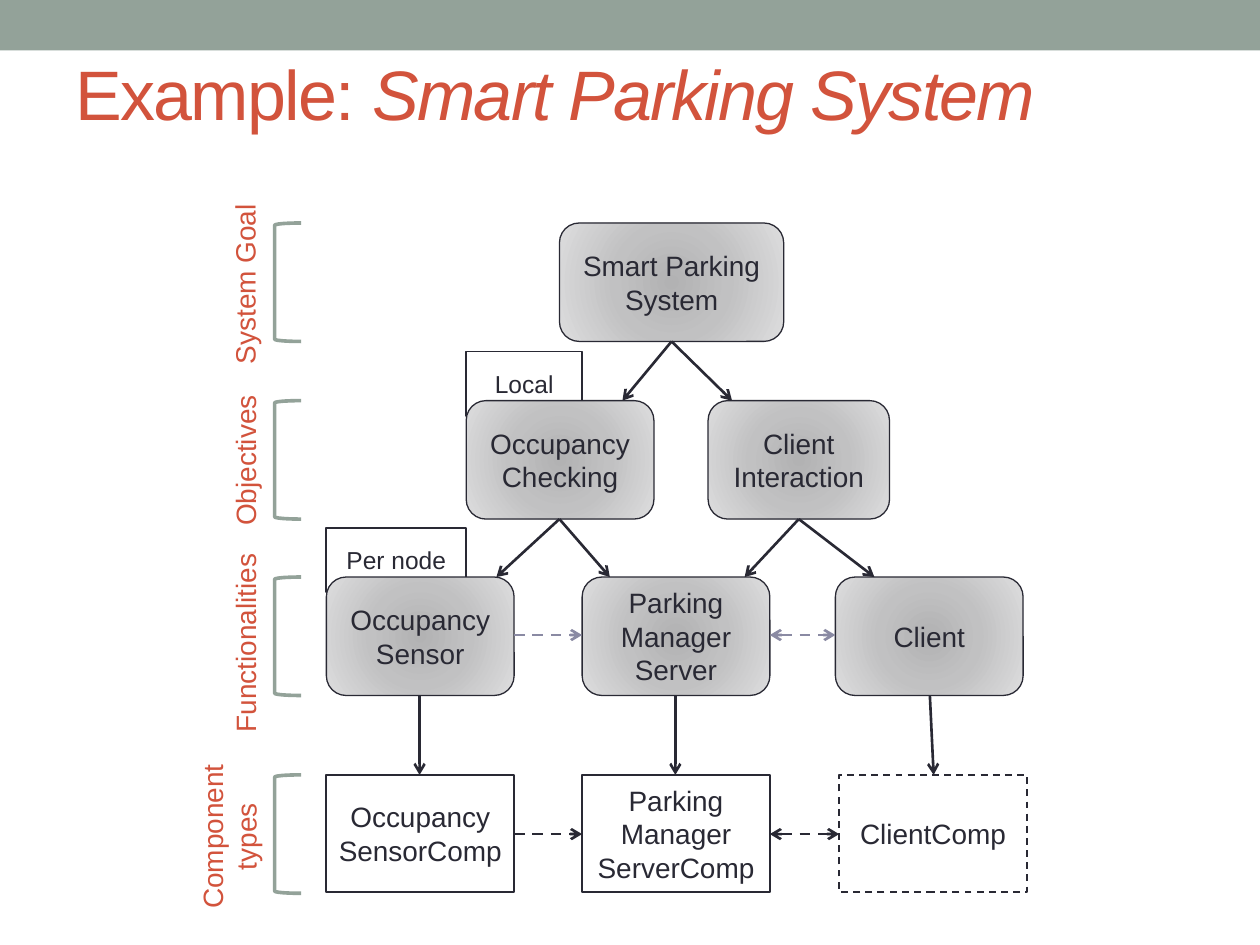
from lxml import etree
from pptx import Presentation
from pptx.dml.color import RGBColor
from pptx.enum.dml import MSO_LINE
from pptx.enum.shapes import MSO_CONNECTOR, MSO_SHAPE
from pptx.enum.text import MSO_ANCHOR, PP_ALIGN
from pptx.oxml import parse_xml
from pptx.oxml.ns import nsdecls, qn
from pptx.util import Inches, Pt

RECT, ROUND = MSO_SHAPE.RECTANGLE, MSO_SHAPE.ROUNDED_RECTANGLE
BRACKET = MSO_SHAPE.LEFT_BRACKET
STRAIGHT, DASH = MSO_CONNECTOR.STRAIGHT, MSO_LINE.DASH
MIDDLE, CENTER, LEFT = MSO_ANCHOR.MIDDLE, PP_ALIGN.CENTER, PP_ALIGN.LEFT

COLORS = {"sage": "93A299", "rust": "D2533C", "dark": "292934",
          "muted": "8A8AA3", "white": "FFFFFF"}
RGB = {name: RGBColor.from_string(value) for name, value in COLORS.items()}
GRADIENT = [(0, "B2B2B3"), (45, "C1C1C2"), (100, "DDDDDE")]

prs = Presentation()
prs.slide_width, prs.slide_height = Inches(10), Inches(7.5)
slide = prs.slides.add_slide(prs.slide_layouts[5])
sp = slide.shapes


def write(s, text, size, color):
    tf = s.text_frame
    tf.word_wrap = True
    tf.vertical_anchor = MIDDLE
    tf.margin_left = tf.margin_right = Inches(0.05)
    p = tf.paragraphs[0]
    p.text = text
    p.alignment = CENTER
    p.font.name, p.font.size = "Arial", Pt(size)
    p.font.color.rgb = RGB[color]


def add_box(kind, x, y, w, h, fill=None, line=None, width=1):
    s = sp.add_shape(kind, Inches(x), Inches(y), Inches(w), Inches(h))
    s.shadow.inherit = False
    if fill:
        s.fill.solid()
        s.fill.fore_color.rgb = RGB[fill]
    else:
        s.fill.background()
    if line:
        s.line.color.rgb = RGB[line]
        s.line.width = Pt(width)
    else:
        s.line.fill.background()
    return s


# Top band and title
add_box(RECT, 0, 0, 10, 0.4, "sage")
title = sp.title
title.left, title.top = Inches(0.5), Inches(0.24)
title.width, title.height = Inches(9), Inches(0.99)
title.text_frame.vertical_anchor = MIDDLE
p = title.text_frame.paragraphs[0]
p.alignment = LEFT
p.font.name, p.font.size = "Arial", Pt(40)
p.font.color.rgb = RGB["rust"]
for text, italic in [("Example: ", False), ("Smart Parking System", True)]:
    r = p.add_run()
    r.text = text
    r.font.italic = italic
    r.font._element.set("spc", "-100")

# Tags tucked behind the goal boxes
for text, x, y, w in [("Per node", 2.59, 4.19, 1.11), ("Local", 3.7, 2.79, 0.92)]:
    write(add_box(RECT, x, y, w, 0.51, "white", "dark"), text, 14, "dark")

# Goal, objective and functionality boxes
GOAL_Y, OBJ_Y, FUNC_Y, COMP_Y = 1.77, 3.18, 4.58, 6.15
BOX_W, BOX_H = 1.49, 0.94
goals = [
    ("Smart Parking System", 4.44, GOAL_Y, 1.78),
    ("Occupancy Checking", 3.7, OBJ_Y, BOX_W),
    ("Client Interaction", 5.62, OBJ_Y, 1.44),
    ("Occupancy Sensor", 2.59, FUNC_Y, BOX_W),
    ("Parking Manager Server", 4.62, FUNC_Y, BOX_W),
    ("Client", 6.63, FUNC_Y, BOX_W),
]
stops = "".join(f'<a:gs pos="{pos * 1000}"><a:srgbClr val="{color}"/></a:gs>'
                for pos, color in GRADIENT)
for text, x, y, w in goals:
    s = add_box(ROUND, x, y, w, BOX_H, "white", "dark", 0.75)
    solid = s._element.spPr.find(qn("a:solidFill"))
    s._element.spPr.replace(solid, parse_xml(
        f'<a:gradFill {nsdecls("a")} rotWithShape="1"><a:gsLst>{stops}</a:gsLst>'
        '<a:path path="circle"><a:fillToRect l="50000" t="50000" r="50000" b="50000"/>'
        '</a:path></a:gradFill>'))
    write(s, text, 16, "dark")

# Component boxes
components = [("Occupancy\nSensorComp", 2.59), ("Parking\nManager\nServerComp", 4.62),
              ("ClientComp", 6.66)]
for text, x in components:
    s = add_box(RECT, x, COMP_Y, BOX_W, 0.93, "white", "dark")
    write(s, text, 16, "dark")
s.line.dash_style = DASH  # the client component is optional

# Level labels and brackets
levels = [
    ("System Goal", 0.99, 2.07, 1.9, 0.37, GOAL_Y),
    ("Objectives", 0.96, 3.47, 1.97, 0.37, OBJ_Y),
    ("Functionalities", 0.85, 4.92, 2.19, 0.37, FUNC_Y),
    ("Component\ntypes", 0.89, 6.32, 1.85, 0.64, COMP_Y),
]
for text, x, y, w, h, bracket_y in levels:
    s = sp.add_textbox(Inches(x), Inches(y), Inches(w), Inches(h))
    s.rotation = 270
    write(s, text, 16, "rust")
    add_box(BRACKET, 2.18, bracket_y, 0.21, BOX_H, line="sage", width=2.08)

# Arrows: x1, y1, x2, y2, colour, dashed, two-way
obj_top, func_top = GOAL_Y + BOX_H, OBJ_Y + BOX_H
func_bottom, func_mid, comp_mid = FUNC_Y + BOX_H, 5.04, 6.62
arrows = [
    (5.33, obj_top, 4.94, OBJ_Y, "dark", False, False),
    (5.33, obj_top, 5.81, OBJ_Y, "dark", False, False),
    (4.44, func_top, 3.94, FUNC_Y, "dark", False, False),
    (4.44, func_top, 4.84, FUNC_Y, "dark", False, False),
    (6.34, func_top, 5.91, FUNC_Y, "dark", False, False),
    (6.34, func_top, 6.94, FUNC_Y, "dark", False, False),
    (3.33, func_bottom, 3.33, COMP_Y, "dark", False, False),
    (5.36, func_bottom, 5.36, COMP_Y, "dark", False, False),
    (7.38, func_bottom, 7.41, COMP_Y, "dark", False, False),
    (4.08, func_mid, 4.62, func_mid, "muted", True, False),
    (6.11, func_mid, 6.63, func_mid, "muted", True, True),
    (4.08, comp_mid, 4.62, comp_mid, "dark", True, False),
    (6.11, comp_mid, 6.66, comp_mid, "dark", True, True),
]
for x1, y1, x2, y2, color, dashed, two_way in arrows:
    s = sp.add_connector(STRAIGHT, Inches(x1), Inches(y1), Inches(x2), Inches(y2))
    s.line.color.rgb = RGB[color]
    s.line.width = Pt(1.5)
    if dashed:
        s.line.dash_style = DASH
    ln = s.line._get_or_add_ln()
    for end in ["headEnd", "tailEnd"] if two_way else ["tailEnd"]:
        etree.SubElement(ln, qn(f"a:{end}"), type="arrow")
    etree.SubElement(s._element.spPr, qn("a:effectLst"))

prs.save("out.pptx")
